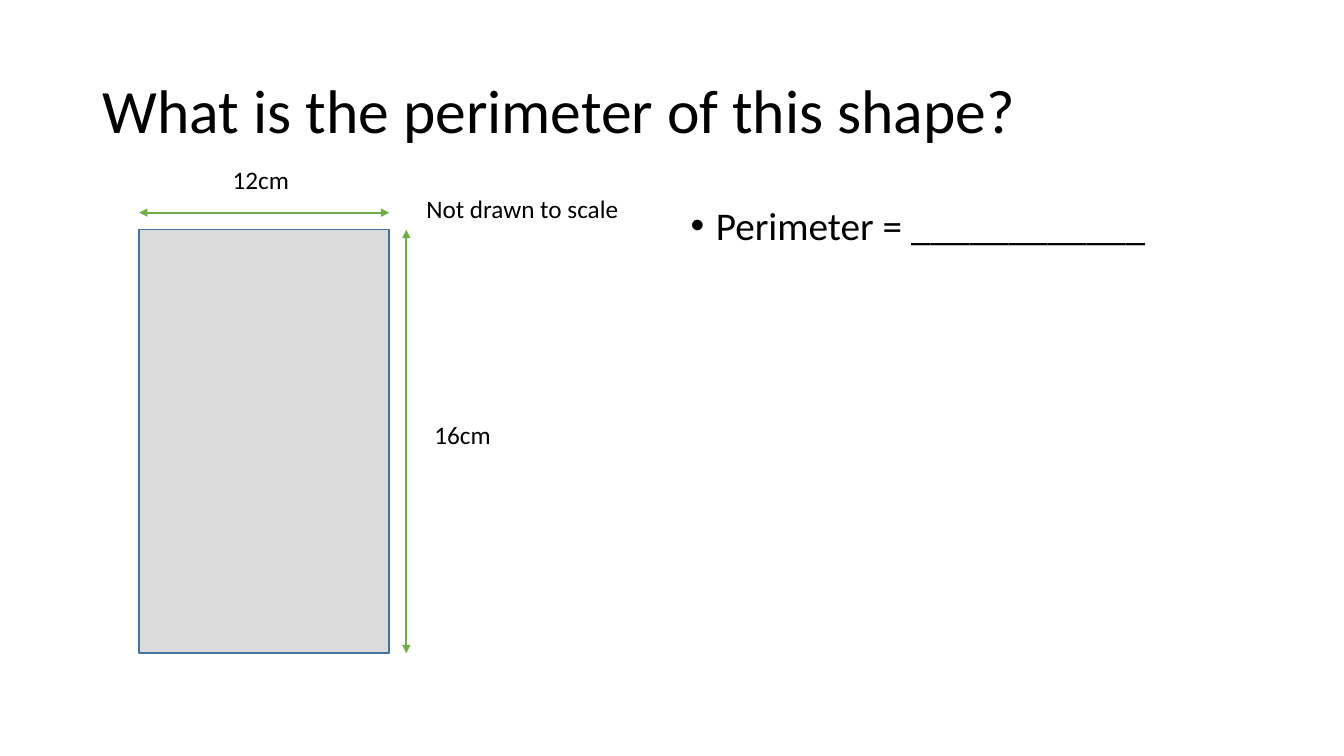
import pptx
import pptx.dml.color
import pptx.enum.shapes
import pptx.enum.text
import pptx.oxml.ns
import pptx.util
from lxml import etree

PX = 9144
BLACK = pptx.dml.color.RGBColor(0x00, 0x00, 0x00)
GREY = pptx.dml.color.RGBColor(0xDB, 0xDB, 0xDB)
BLUE = pptx.dml.color.RGBColor(0x43, 0x73, 0x9E)
GREEN = pptx.dml.color.RGBColor(0x70, 0xAD, 0x47)


def scale(*sizes):
    """Turn px lengths into EMU."""
    return [pptx.util.Emu(size * PX) for size in sizes]


def add_tag(parent, tag, **attrs):
    """Append a drawing element to its parent."""
    return etree.SubElement(parent, pptx.oxml.ns.qn(tag), **attrs)


def write(frame, text, size):
    """Fill a text frame with one left-aligned line and return its paragraph."""
    frame.text = text
    para = frame.paragraphs[0]
    para.alignment = pptx.enum.text.PP_ALIGN.LEFT
    font = para.runs[0].font
    font.name = "Calibri"
    font.size = pptx.util.Pt(size)
    font.color.rgb = BLACK
    return para


def fill_holder(holder, box, text, size, anchor):
    """Place a placeholder in its box and write its text."""
    holder.left, holder.top, holder.width, holder.height = scale(*box)
    frame = holder.text_frame
    frame.auto_size = pptx.enum.text.MSO_AUTO_SIZE.NONE
    frame.vertical_anchor = anchor
    para = write(frame, text, size)
    para.line_spacing = 0.9
    para.space_before = pptx.util.Pt(0)
    return para


def add_title(slide, box):
    """Write the question as the slide title."""
    fill_holder(slide.shapes.title, box, "What is the perimeter of this shape?",
                44, pptx.enum.text.MSO_ANCHOR.MIDDLE)


def add_answer(slide, box):
    """Write the bulleted answer line."""
    para = fill_holder(slide.placeholders[1], box, "Perimeter = ____________",
                       28, pptx.enum.text.MSO_ANCHOR.TOP)
    props = para._p.get_or_add_pPr()
    indent = scale(25)[0]
    props.set("marL", str(indent))
    props.set("indent", str(-indent))
    add_tag(props, "a:buFont", typeface="Arial")
    add_tag(props, "a:buChar", char="•")


def add_arrow(slide, *ends):
    """Draw a green line with an arrowhead at both ends."""
    line = slide.shapes.add_connector(
        pptx.enum.shapes.MSO_CONNECTOR.STRAIGHT, *scale(*ends))
    line.line.color.rgb = GREEN
    line.line.width = pptx.util.Pt(1.5)
    stroke = line.line._get_or_add_ln()
    add_tag(stroke, "a:headEnd", type="triangle")
    add_tag(stroke, "a:tailEnd", type="triangle")
    add_tag(line._element.spPr, "a:effectLst")


def add_label(slide, left, top, width, text):
    """Add a small unwrapped label."""
    label = slide.shapes.add_textbox(*scale(left, top, width, 40))
    frame = label.text_frame
    frame.word_wrap = False
    frame.auto_size = pptx.enum.text.MSO_AUTO_SIZE.SHAPE_TO_FIT_TEXT
    write(frame, text, 18)


def add_figure(slide, box):
    """Draw the rectangle with its arrows and measures."""
    left, top, width, height = box
    right, base = left + width, top + height
    gap = 17
    rect = slide.shapes.add_shape(
        pptx.enum.shapes.MSO_SHAPE.RECTANGLE, *scale(*box))
    rect.shadow.inherit = False
    rect.fill.solid()
    rect.fill.fore_color.rgb = GREY
    rect.line.color.rgb = BLUE
    rect.line.width = pptx.util.Pt(1)
    add_arrow(slide, left, top - gap, right, top - gap)
    add_arrow(slide, right + gap, base, right + gap, top)
    add_label(slide, left + 83, top - 70, 82, "12cm")
    add_label(slide, right + 35, top + 183, 82, "16cm")
    add_label(slide, right + 27, top - 41, 219, "Not drawn to scale")


def main():
    """Build and save the slide."""
    deck = pptx.Presentation()
    deck.slide_width, deck.slide_height = scale(1333, 750)
    slide = deck.slides.add_slide(deck.slide_layouts[1])
    add_title(slide, (92, 40, 1150, 145))
    add_answer(slide, (675, 200, 567, 476))
    add_figure(slide, (138, 228, 248, 420))
    deck.save("out.pptx")


if __name__ == "__main__":
    main()
